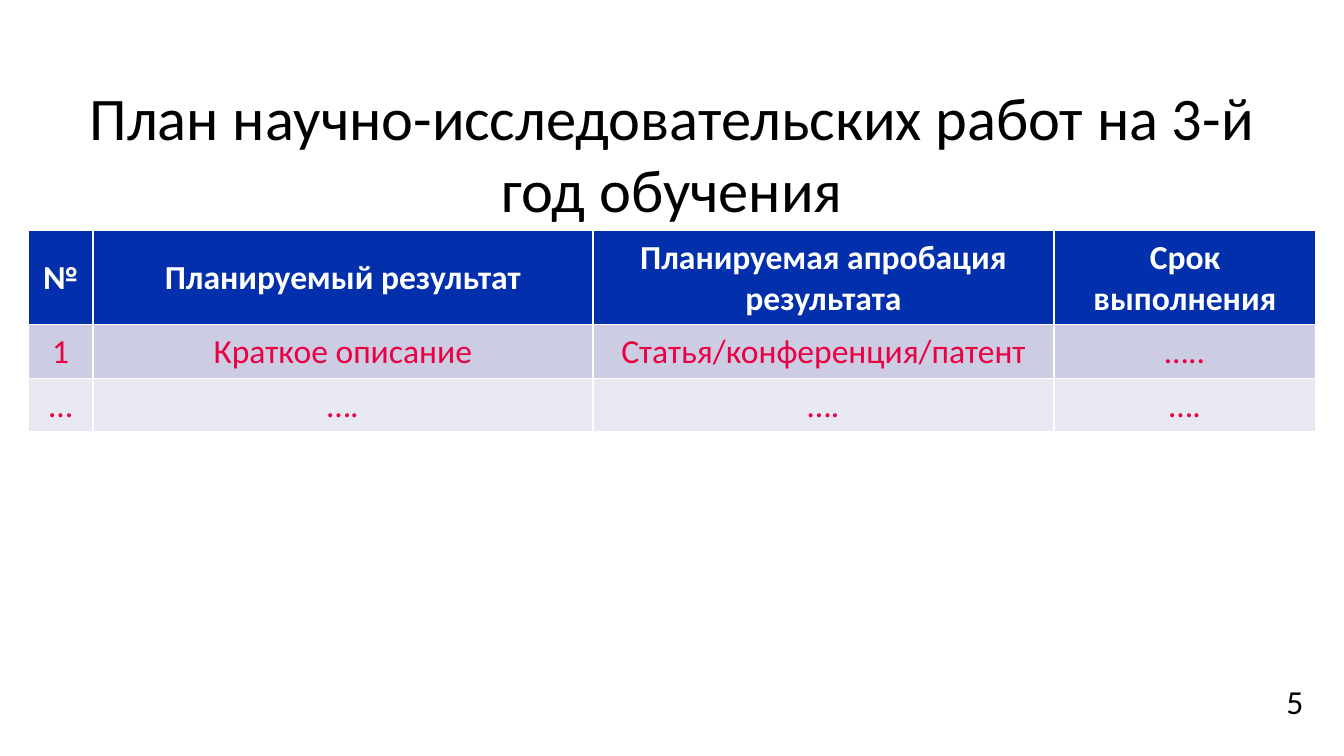
from pptx import Presentation
from pptx.dml.color import RGBColor
from pptx.enum.text import MSO_ANCHOR, PP_ALIGN
from pptx.util import Pt

CENTER, LEFT = PP_ALIGN.CENTER, PP_ALIGN.LEFT
TOP, MIDDLE, BOTTOM = MSO_ANCHOR.TOP, MSO_ANCHOR.MIDDLE, MSO_ANCHOR.BOTTOM

BLACK = RGBColor(0x00, 0x00, 0x00)
WHITE = RGBColor(0xFF, 0xFF, 0xFF)
BLUE = RGBColor(0x02, 0x30, 0xAC)
RED = RGBColor(0xEC, 0x00, 0x44)
LILAC = RGBColor(0xCC, 0xCD, 0xE3)
PALE = RGBColor(0xE7, 0xE8, 0xF1)
FONT = "Calibri"

TITLE = "План научно-исследовательских работ на 3-й год обучения"
PAGE_NUMBER = "5"
ROWS = [
    ("№", "Планируемый результат", "Планируемая апробация результата", "Срок выполнения"),
    ("1", "Краткое описание", "Статья/конференция/патент", "….."),
    ("…", "….", "….", "…."),
]
ROW_FILLS = [BLUE, LILAC, PALE]
ROW_HEIGHTS = [50.4, 28.8, 28.8]
COL_WIDTHS = [34.4, 268, 247, 140.4]
TABLE_LEFT, TABLE_TOP = 15.3, 123.5


def style(p, size, color, align, bold=False):
    p.alignment = align
    p.font.name = FONT
    p.font.size = Pt(size)
    p.font.color.rgb = color
    p.font.bold = bold


def add_text(s, text, box, size, align, anchor, wrap):
    tf = s.shapes.add_textbox(*map(Pt, box)).text_frame
    tf.word_wrap = wrap
    tf.vertical_anchor = anchor
    tf.text = text
    style(tf.paragraphs[0], size, BLACK, align)


def add_plan(s):
    table = s.shapes.add_table(
        len(ROWS), len(COL_WIDTHS), Pt(TABLE_LEFT), Pt(TABLE_TOP),
        Pt(sum(COL_WIDTHS)), Pt(sum(ROW_HEIGHTS))).table
    for col, width in zip(table.columns, COL_WIDTHS):
        col.width = Pt(width)
    for i, (row, texts) in enumerate(zip(table.rows, ROWS)):
        row.height = Pt(ROW_HEIGHTS[i])
        header = i == 0
        for cell, text in zip(row.cells, texts):
            cell.fill.solid()
            cell.fill.fore_color.rgb = ROW_FILLS[i]
            cell.vertical_anchor = MIDDLE
            cell.text = text
            style(cell.text_frame.paragraphs[0], 18, WHITE if header else RED, CENTER, header)


prs = Presentation()
prs.slide_width, prs.slide_height = Pt(720), Pt(405)
s = prs.slides.add_slide(prs.slide_layouts[6])
add_text(s, TITLE, (17, 33, 686, 91), 32.4, CENTER, BOTTOM, True)
add_plan(s)
add_text(s, PAGE_NUMBER, (682, 361, 21, 29), 18, LEFT, TOP, False)
prs.save("out.pptx")
